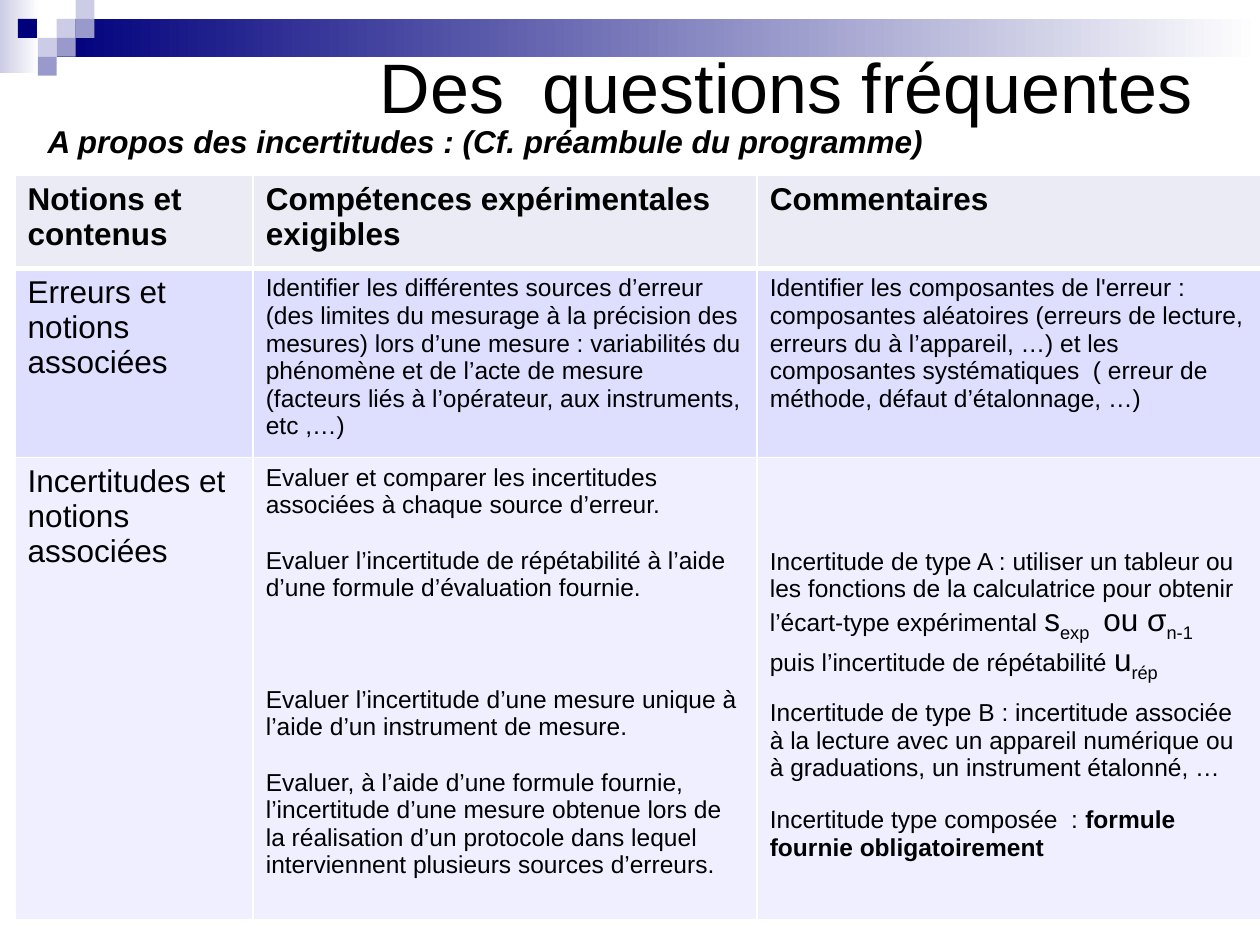
import pptx
import pptx.util
import pptx.dml.color
import pptx.enum.shapes
import pptx.enum.text
import pptx.oxml
import pptx.oxml.ns
from lxml import etree

theme = {
    "font": "Arial", "ink": "000000", "white": "FFFFFF",
    "navy": "00007D", "lilac": "CCCCE6", "violet": "9999CC",
    "rows": ["EBEBF5", "DEDEFF", "EFEFFF"],
    "title": 40, "heading": 18, "body": 14,
}
inches = pptx.util.Inches
color = pptx.dml.color.RGBColor.from_string
unit = 0.15


def style(run, size, bold=False, italic=False, baseline=0):
    run.font.name = theme["font"]
    run.font.size = pptx.util.Pt(size)
    run.font.bold = bold
    run.font.italic = italic
    run.font.color.rgb = color(theme["ink"])
    if baseline:
        run._r.get_or_add_rPr().set("baseline", str(baseline * 1000))


def border(cell, side, points):
    line = etree.SubElement(cell._tc.get_or_add_tcPr(), pptx.oxml.ns.qn("a:ln" + side),
                            w=str(pptx.util.Pt(points)))
    fill = etree.SubElement(line, pptx.oxml.ns.qn("a:solidFill"))
    etree.SubElement(fill, pptx.oxml.ns.qn("a:srgbClr"), val=theme["white"])


deck = pptx.Presentation()
deck.slide_width, deck.slide_height = inches(10), inches(7.5)
slide = deck.slides.add_slide(deck.slide_layouts[6])

banner = [
    (0, 0, 2.07, 3.87, ["lilac", "white"]),
    (3, 1, 63.67, 2, ["navy", "white"]),
    (3, 1, 1, 1, ["lilac"]),
    (4, 0, 1, 1, ["lilac"]),
    (4, 1, 1, 1, ["violet"]),
    (2, 2, 1, 1, ["lilac"]),
    (0.95, 1, 1, 1, ["navy"]),
    (3, 2, 1, 1, ["violet"]),
    (2, 3, 1, 1, ["violet"]),
]
for column, row, width, height, tones in banner:
    tile = slide.shapes.add_shape(
        pptx.enum.shapes.MSO_SHAPE.RECTANGLE,
        *[inches(unit * length) for length in (column, row, width, height)])
    tile.shadow.inherit = False
    tile.line.fill.background()
    if len(tones) == 1:
        tile.fill.solid()
        tile.fill.fore_color.rgb = color(theme[tones[0]])
    else:
        tile.fill.gradient()
        tile.fill.gradient_angle = 0
        for stop, tone in zip(tile.fill.gradient_stops, tones):
            stop.color.rgb = color(theme[tone])

title = slide.shapes.add_textbox(inches(2.24), inches(0.29), inches(7.32), inches(0.77)).text_frame
title.word_wrap = True
title.vertical_anchor = pptx.enum.text.MSO_ANCHOR.BOTTOM
title.text = "Des  questions fréquentes"
title.paragraphs[0].alignment = pptx.enum.text.PP_ALIGN.RIGHT
style(title.paragraphs[0].runs[0], theme["title"])

heading, body = theme["heading"], theme["body"]
blank = 16
content = [
    [
        [(0, [("Notions et contenus", heading, True)])],
        [(0, [("Compétences expérimentales exigibles", heading, True)])],
        [(0, [("Commentaires", heading, True)])],
    ],
    [
        [(0, [("Erreurs et notions associées", heading)])],
        [(0, [("Identifier les différentes sources d’erreur (des limites du mesurage à la "
               "précision des mesures) lors d’une mesure : variabilités du phénomène et de "
               "l’acte de mesure (facteurs liés à l’opérateur, aux instruments, etc ,…)", body)])],
        [(0, [("Identifier les composantes de l'erreur : composantes aléatoires (erreurs de "
               "lecture, erreurs du à l’appareil, …) et les composantes systématiques  "
               "( erreur de méthode, défaut d’étalonnage, …)", body)])],
    ],
    [
        [(0, [("Incertitudes et notions associées", heading)])],
        [
            (0, [("Evaluer et comparer les incertitudes associées à chaque source d’erreur.", body)]),
            (blank, [("Evaluer l’incertitude de répétabilité à l’aide d’une formule "
                      "d’évaluation fournie.", body)]),
            (3 * blank, [("Evaluer l’incertitude d’une mesure unique à l’aide d’un instrument "
                          "de mesure.", body)]),
            (blank, [("Evaluer, à l’aide d’une formule fournie, l’incertitude d’une mesure "
                      "obtenue lors de la réalisation d’un protocole dans lequel interviennent "
                      "plusieurs sources d’erreurs.", body)]),
        ],
        [
            (0, [("Incertitude de type A : utiliser un tableur ou les fonctions de la "
                  "calculatrice pour obtenir l’écart-type expérimental ", body),
                 ("s", heading), ("exp ", heading, False, False, -25),
                 (" ou σ", heading), ("n-1", heading, False, False, -25)]),
            (0, [("puis l’incertitude de répétabilité ", body),
                 ("u", heading), ("rép", heading, False, False, -25)]),
            (9, [("Incertitude de type B : incertitude associée à la lecture avec un appareil "
                  "numérique ou à graduations, un instrument étalonné, …", body)]),
            (14, [("Incertitude type composée  : ", body),
                  ("formule fournie obligatoirement", body, True)]),
        ],
    ],
]
widths, heights = [1.89, 4, 4], [0.74, 1.5, 3.67]
table = slide.shapes.add_table(3, 3, inches(0.12), inches(1.39),
                               inches(sum(widths)), inches(sum(heights))).table
table.horz_banding = False
for column, width in zip(table.columns, widths):
    column.width = inches(width)
for row, height in zip(table.rows, heights):
    row.height = inches(height)

for r, entries in enumerate(content):
    for c, paragraphs in enumerate(entries):
        cell = table.cell(r, c)
        for side, points in (("L", 1), ("R", 1), ("T", 3 if r == 1 else 1), ("B", 3 if r == 0 else 1)):
            border(cell, side, points)
        cell.fill.solid()
        cell.fill.fore_color.rgb = color(theme["rows"][r])
        for p, (gap, pieces) in enumerate(paragraphs):
            paragraph = cell.text_frame.paragraphs[0] if p == 0 else cell.text_frame.add_paragraph()
            paragraph.space_before = pptx.util.Pt(gap)
            for wording, *look in pieces:
                run = paragraph.add_run()
                run.text = wording
                style(run, *look)
table.cell(2, 2).margin_top = inches(0.05) + pptx.util.Pt(3 * blank)

subject = slide.shapes.add_textbox(inches(0.28), inches(0.92), inches(7.29), inches(0.4)).text_frame
subject.word_wrap = False
subject.text = "A propos des incertitudes : (Cf. préambule du programme)"
style(subject.paragraphs[0].runs[0], heading, bold=True, italic=True)

deck.save("out.pptx")
